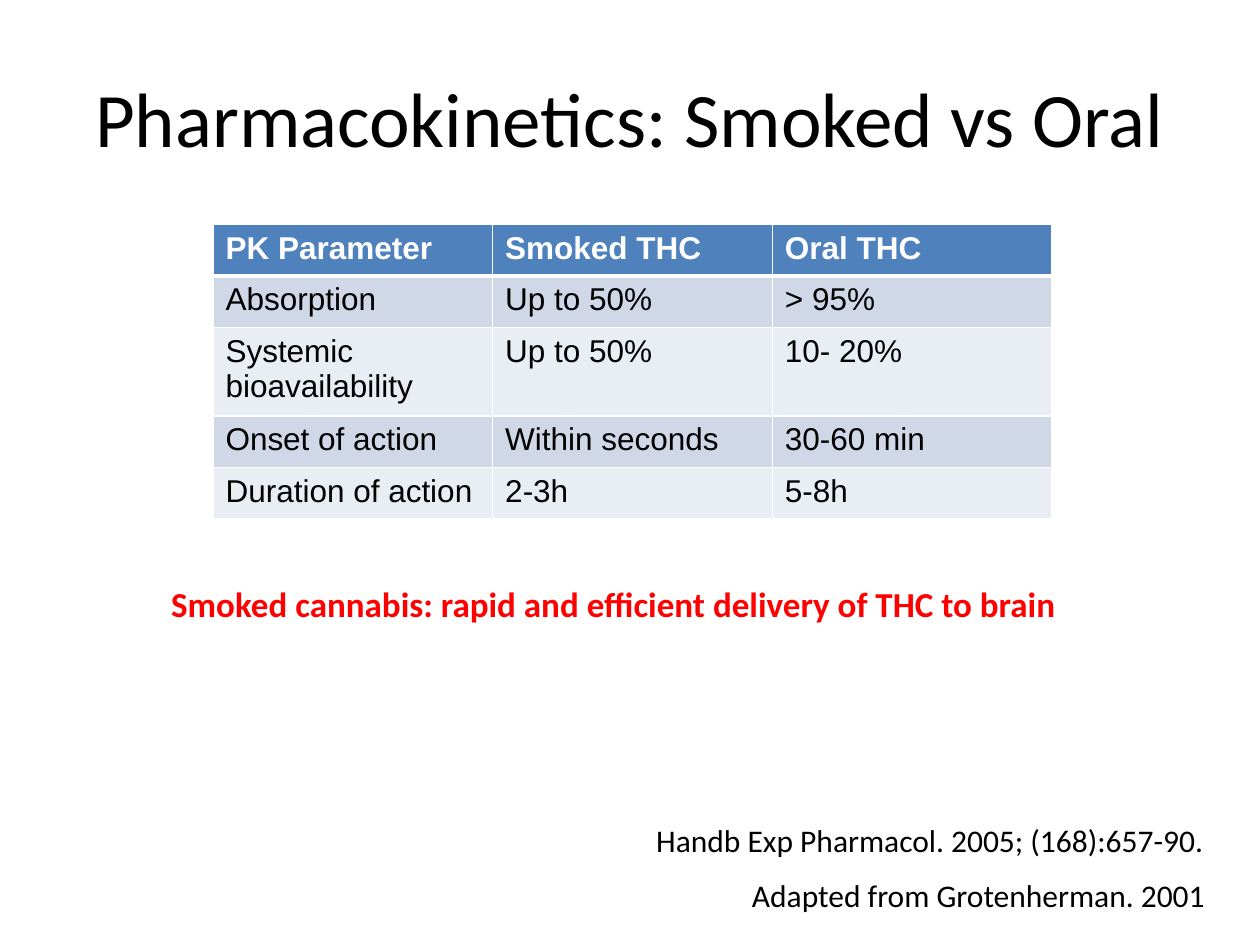
from dataclasses import dataclass

from lxml.etree import SubElement
from pptx import Presentation
from pptx.dml.color import RGBColor as Rgb
from pptx.enum.text import MSO_ANCHOR as Anchor, MSO_AUTO_SIZE as Fit, PP_ALIGN as Align
from pptx.oxml.ns import qn
from pptx.util import Inches, Pt


@dataclass(frozen=True)
class Theme:
    black: str = "000000"
    white: str = "FFFFFF"
    red: str = "FF0000"
    head: str = "4F81BD"
    bands: tuple = ("D0D8E8", "E9EDF4")
    sans: str = "Calibri"
    grid: str = "Arial"
    title: int = 44
    claim: int = 20
    body: int = 18


THEME = Theme()


@dataclass(frozen=True)
class Label:
    text: str
    left: float
    top: float
    width: float
    height: float
    size: int = THEME.body
    color: str = THEME.black
    bold: bool = False
    wrap: bool = True
    title: bool = False


LABELS = (
    Label("Adapted from Grotenherman. 2001", 5.87, 6.9, 3.84, 0.4, wrap=False),
    Label("Smoked cannabis: rapid and efficient delivery of THC to brain",
          1.26, 4.57, 7.69, 0.44, THEME.claim, THEME.red, bold=True),
    Label("Handb Exp Pharmacol. 2005; (168):657-90.", 5.11, 6.47, 4.6, 0.4, wrap=False),
)
TITLE = Label("Pharmacokinetics: Smoked vs Oral", 0.5, 0.3, 9, 1.25,
              THEME.title, title=True)

ROWS = (
    ("PK Parameter", "Smoked THC", "Oral THC"),
    ("Absorption", "Up to 50%", "> 95%"),
    ("Systemic bioavailability", "Up to 50%", "10- 20%"),
    ("Onset of action", "Within seconds", "30-60 min"),
    ("Duration of action", "2-3h", "5-8h"),
)
COL_WIDTH, ROW_HEIGHT = 2.22, 0.41


def style(frame, font: str, size: int, color: str, bold: bool) -> None:
    for para in frame.paragraphs:
        for run in para.runs:
            run.font.name = font
            run.font.size = Pt(size)
            run.font.bold = bold
            run.font.color.rgb = Rgb.from_string(color)


def add_label(slide, label: Label) -> None:
    box = slide.shapes.add_textbox(Inches(label.left), Inches(label.top),
                                   Inches(label.width), Inches(label.height))
    frame = box.text_frame
    frame.text = label.text
    frame.word_wrap = label.wrap
    if label.title:
        frame.vertical_anchor = Anchor.MIDDLE
        frame.paragraphs[0].alignment = Align.CENTER
    else:
        frame.auto_size = Fit.SHAPE_TO_FIT_TEXT
    style(frame, THEME.sans, label.size, label.color, label.bold)


def add_edges(cell, top: int, bottom: int) -> None:
    """Draw white cell borders; call before the fill, which must follow them."""
    props = cell._tc.get_or_add_tcPr()
    for side, width in (("L", 1), ("R", 1), ("T", top), ("B", bottom)):
        line = SubElement(props, qn(f"a:ln{side}"), w=str(Pt(width)))
        fill = SubElement(line, qn("a:solidFill"))
        SubElement(fill, qn("a:srgbClr"), val=THEME.white)


def add_grid(slide) -> None:
    table = slide.shapes.add_table(
        len(ROWS), len(ROWS[0]), Inches(1.69), Inches(1.78),
        Inches(COL_WIDTH * len(ROWS[0])), Inches(ROW_HEIGHT * len(ROWS))).table
    for col in table.columns:
        col.width = Inches(COL_WIDTH)
    for r, texts in enumerate(ROWS):
        table.rows[r].height = Inches(ROW_HEIGHT)
        head = r == 0
        shade = THEME.head if head else THEME.bands[(r - 1) % 2]
        for c, text in enumerate(texts):
            cell = table.cell(r, c)
            add_edges(cell, 3 if r == 1 else 1, 3 if head else 1)
            cell.fill.solid()
            cell.fill.fore_color.rgb = Rgb.from_string(shade)
            cell.text_frame.text = text
            style(cell.text_frame, THEME.grid, THEME.body,
                  THEME.white if head else THEME.black, head)


def main() -> None:
    deck = Presentation()
    deck.slide_width, deck.slide_height = Inches(10), Inches(7.5)
    slide = deck.slides.add_slide(deck.slide_layouts[6])
    add_label(slide, TITLE)
    add_grid(slide)
    for label in LABELS:
        add_label(slide, label)
    deck.save("out.pptx")


if __name__ == "__main__":
    main()
